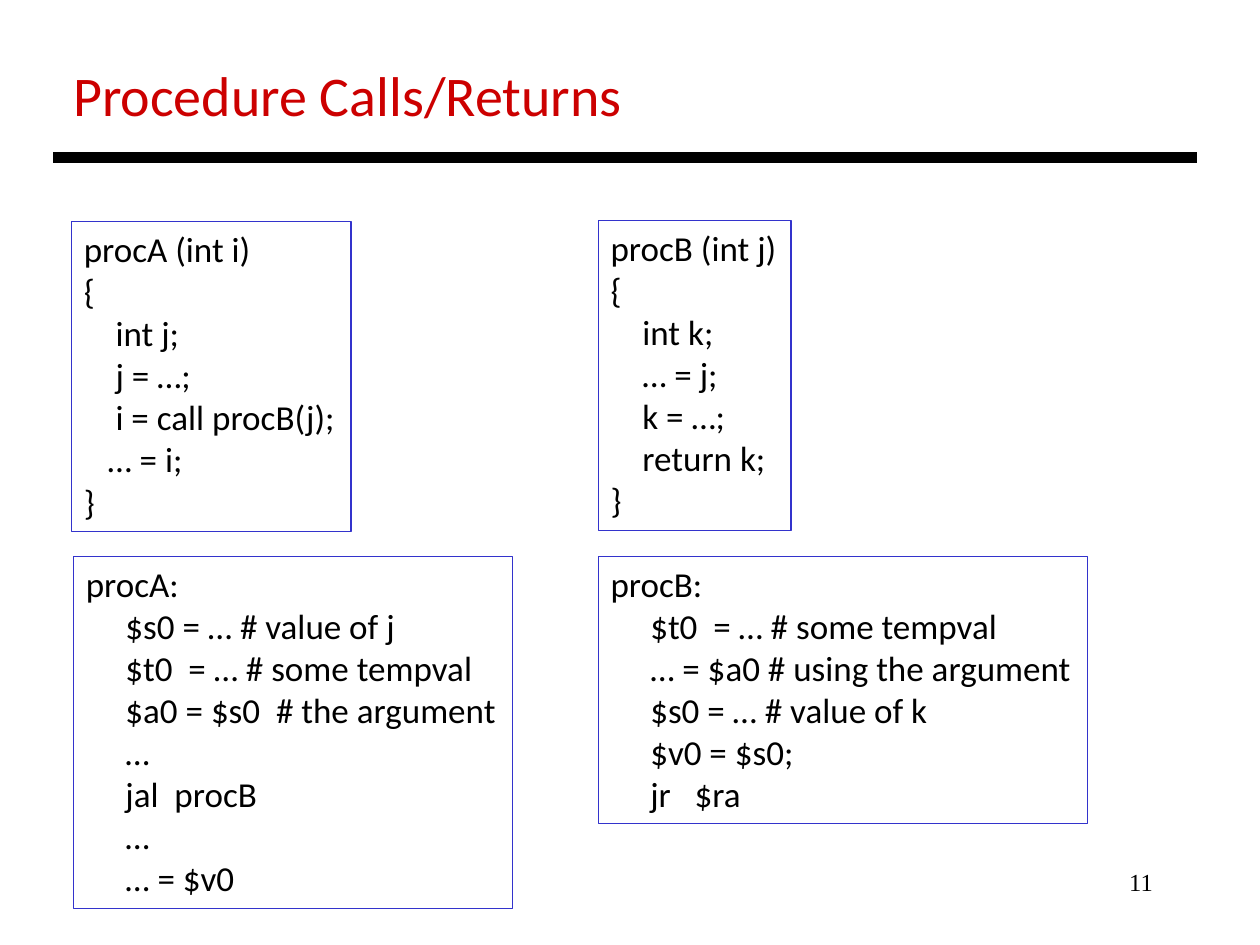
import pptx
import pptx.util
import pptx.dml.color
import pptx.enum.shapes
import pptx.enum.text
import pptx.oxml
import pptx.oxml.ns
from pptx.util import Cm, Pt

RED = pptx.dml.color.RGBColor(0xCC, 0x00, 0x00)
BLUE = pptx.dml.color.RGBColor(0x33, 0x33, 0xCC)
BLACK = pptx.dml.color.RGBColor(0, 0, 0)

ALIGN = pptx.enum.text.PP_ALIGN
FRAME = {
    "word_wrap": False,
    "auto_size": pptx.enum.text.MSO_AUTO_SIZE.SHAPE_TO_FIT_TEXT,
    "vertical_anchor": pptx.enum.text.MSO_ANCHOR.TOP,
}
TITLE_FONT = {"name": "Calibri", "size": Pt(32)}
CODE_FONT = {"name": "Calibri", "size": Pt(20)}
NUMBER_FONT = {"name": "Times New Roman", "size": Pt(14)}

SPACE = 0.16  # width in cm of one space in the code font

# Each line of code is (indent in spaces, text).
PROC_A_SOURCE = [
    (0, "procA (int i)"), (0, "{"), (4, "int j;"), (4, "j = …;"),
    (4, "i = call procB(j);"), (3, "… = i;"), (0, "}"),
]
PROC_B_SOURCE = [
    (0, "procB (int j)"), (0, "{"), (4, "int k;"), (4, "… = j;"),
    (4, "k = …;"), (4, "return k;"), (0, "}"),
]
PROC_A_ASSEMBLY = [
    (0, "procA:"), (5, "$s0 = … # value of j"), (5, "$t0  = … # some tempval"),
    (5, "$a0 = $s0  # the argument"), (5, "…"), (5, "jal  procB"),
    (5, "…"), (5, "… = $v0"),
]
PROC_B_ASSEMBLY = [
    (0, "procB:"), (5, "$t0  = … # some tempval"),
    (5, "… = $a0 # using the argument"), (5, "$s0 = … # value of k"),
    (5, "$v0 = $s0;"), (5, "jr   $ra"),
]

# Left, top, width and height in cm, then the code.
CODE_BOXES = [
    (1.44, 4.47, 5.64, 6.25, PROC_A_SOURCE),
    (12.06, 4.44, 3.89, 6.25, PROC_B_SOURCE),
    (1.48, 11.22, 8.85, 7.09, PROC_A_ASSEMBLY),
    (12.06, 11.22, 9.86, 5.38, PROC_B_ASSEMBLY),
]


def set_attributes(obj, values):
    for name, value in values.items():
        setattr(obj, name, value)


def write_paragraph(p, text, font, color, align=ALIGN.LEFT, indent=0):
    p.alignment = align
    if indent:
        p._p.get_or_add_pPr().set("marL", str(Cm(indent)))
    r = p.add_run()
    r.text = text
    set_attributes(r.font, font)
    r.font.color.rgb = color


def set_title(slide, text):
    sp = slide.shapes.title
    box = {"left": Cm(1.22), "top": Cm(1.09), "width": Cm(11.68), "height": Cm(1.63)}
    set_attributes(sp, box)
    set_attributes(sp.text_frame, FRAME)
    write_paragraph(sp.text_frame.paragraphs[0], text, TITLE_FONT, RED)


def add_rule(slide):
    line = slide.shapes.add_connector(
        pptx.enum.shapes.MSO_CONNECTOR.STRAIGHT, Cm(1.07), Cm(3.18), Cm(24.13), Cm(3.18))
    line.line.color.rgb = BLACK
    line.line.width = Pt(6)
    sp_pr = line._element.find(pptx.oxml.ns.qn("p:spPr"))
    sp_pr.append(pptx.oxml.parse_xml(
        "<a:effectLst %s/>" % pptx.oxml.ns.nsdecls("a")))


def add_code_box(slide, left, top, width, height, code):
    sp = slide.shapes.add_shape(
        pptx.enum.shapes.MSO_SHAPE.RECTANGLE, Cm(left), Cm(top), Cm(width), Cm(height))
    sp.shadow.inherit = False
    sp.fill.background()
    sp.line.color.rgb = BLUE
    sp.line.width = Pt(0.75)
    tf = sp.text_frame
    set_attributes(tf, FRAME)
    for i, (spaces, text) in enumerate(code):
        p = tf.add_paragraph() if i else tf.paragraphs[0]
        write_paragraph(p, text, CODE_FONT, BLACK, indent=spaces * SPACE)


def add_slide_number(slide, text):
    sp = slide.shapes.add_textbox(Cm(18.21), Cm(17.35), Cm(5.28), Cm(1.27))
    sp.text_frame.word_wrap = True
    write_paragraph(sp.text_frame.paragraphs[0], text, NUMBER_FONT, BLACK, ALIGN.RIGHT)


def main():
    prs = pptx.Presentation()
    prs.slide_width, prs.slide_height = Cm(25.4), Cm(19.05)
    slide = prs.slides.add_slide(prs.slide_layouts.get_by_name("Title Only"))
    set_title(slide, "Procedure Calls/Returns")
    add_rule(slide)
    for box in CODE_BOXES:
        add_code_box(slide, *box)
    add_slide_number(slide, "11")
    prs.save("out.pptx")


if __name__ == "__main__":
    main()
